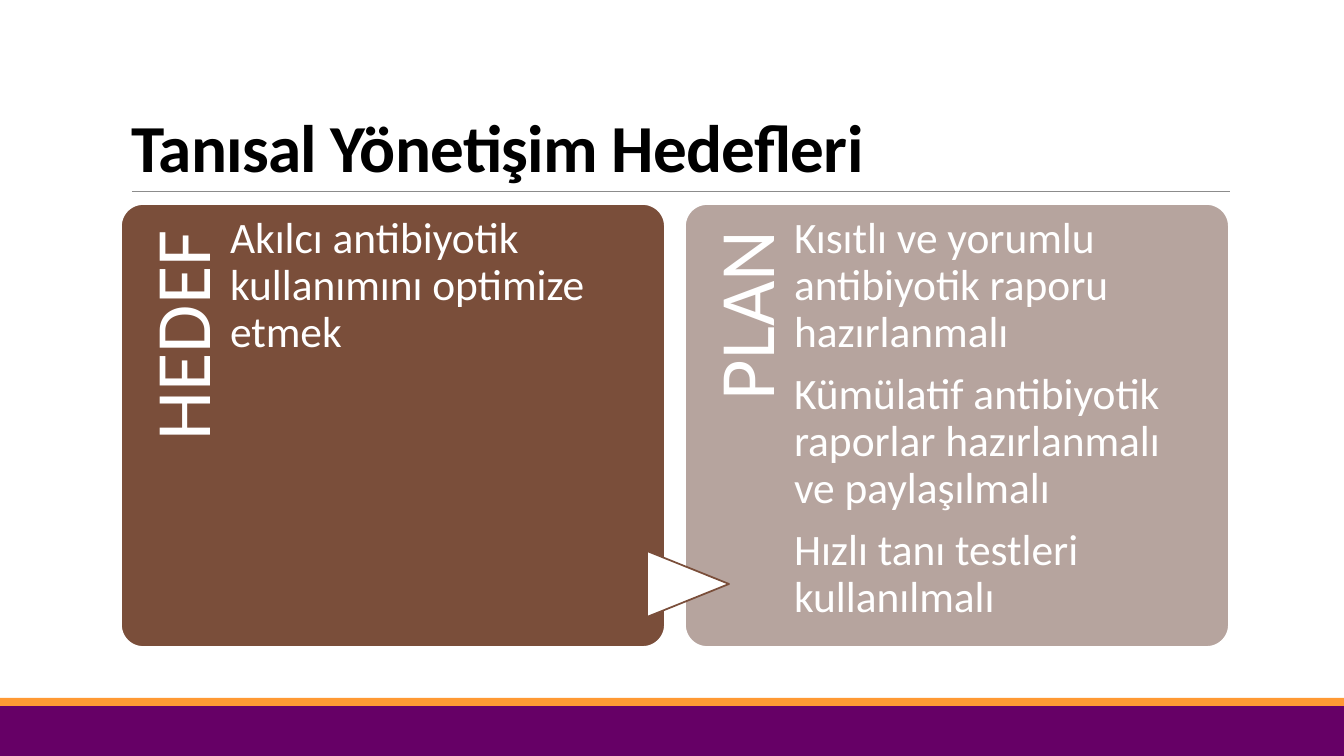
from lxml.etree import SubElement
from pptx import Presentation
from pptx.dml.color import RGBColor
from pptx.enum.shapes import MSO_CONNECTOR, MSO_SHAPE
from pptx.enum.text import MSO_ANCHOR, MSO_AUTO_SIZE, PP_ALIGN
from pptx.oxml.ns import qn
from pptx.util import Emu, Pt

EMU_PER_PX = 914400 / 100.8
CARD_LEFT, CARD_TOP, CARD_WIDTH, CARD_HEIGHT, CARD_STEP = 121, 204, 544, 443, 564
WHITE, BROWN = "FFFFFF", "7A4E3A"
CARDS = [
    ("HEDEF", BROWN, ["Akılcı antibiyotik kullanımını optimize etmek"]),
    ("PLAN", "B6A49E", [
        "Kısıtlı ve yorumlu antibiyotik raporu hazırlanmalı",
        "Kümülatif antibiyotik raporlar hazırlanmalı ve paylaşılmalı",
        "Hızlı tanı testleri kullanılmalı",
    ]),
]


def px(length):
    return Emu(round(length * EMU_PER_PX))


def color(value):
    return RGBColor.from_string(value)


def set_attributes(target, values):
    for name, value in values.items():
        setattr(target, name, value)


def add_block(page, kind, bounds, fill, outline=None):
    block = page.shapes.add_shape(kind, *map(px, bounds))
    block.shadow.inherit = False
    block.fill.solid()
    block.fill.fore_color.rgb = color(fill)
    if outline:
        block.line.color.rgb = color(outline)
        block.line.width = Pt(1.25)
    else:
        block.line.fill.background()
    return block


def add_rule(page, left, top, right):
    rule = page.shapes.add_connector(
        MSO_CONNECTOR.STRAIGHT, px(left), px(top), px(right), px(top))
    rule.line.color.rgb = color("8C8C8C")
    rule.line.width = Pt(0.5)
    SubElement(rule.element.spPr, qn("a:effectLst"))


def write(frame, texts, size, fill, paragraph_format, bold=False):
    for index, text in enumerate(texts):
        para = frame.paragraphs[0] if index == 0 else frame.add_paragraph()
        set_attributes(para, paragraph_format)
        span = para.add_run()
        span.text = text
        set_attributes(span.font, {"name": "Calibri", "size": Pt(size), "bold": bold})
        span.font.color.rgb = color(fill)


def add_text(page, bounds, texts, size, alignment, top_inset, right_inset):
    box = page.shapes.add_textbox(*map(px, bounds))
    set_attributes(box.text_frame, {
        "word_wrap": True, "margin_left": 0, "margin_bottom": 0,
        "margin_top": px(top_inset), "margin_right": px(right_inset),
    })
    write(box.text_frame, texts, size, WHITE, {
        "alignment": alignment, "line_spacing": 0.9, "space_after": Pt(11),
    })
    return box


def format_title(page, text):
    title = page.shapes.title
    set_attributes(title, {
        "left": px(121), "top": px(31), "width": px(1109), "height": px(160),
    })
    set_attributes(title.text_frame, {
        "word_wrap": True, "auto_size": MSO_AUTO_SIZE.NONE,
        "vertical_anchor": MSO_ANCHOR.BOTTOM,
    })
    write(title.text_frame, [text], 48, "000000",
          {"alignment": PP_ALIGN.LEFT, "line_spacing": 0.85}, bold=True)
    span = title.text_frame.paragraphs[0].runs[0]
    span._r.get_or_add_rPr().set("spc", "-50")


def add_card(page, left, heading, fill, items):
    card = add_block(page, MSO_SHAPE.ROUNDED_RECTANGLE,
                     (left, CARD_TOP, CARD_WIDTH, CARD_HEIGHT), fill, WHITE)
    card.adjustments[0] = 0.05
    label = add_text(page, (left - 127, 331, 364, 109), [heading], 56,
                     PP_ALIGN.RIGHT, 21, 27)
    label.rotation = 270
    add_text(page, (left + 109, CARD_TOP, 406, CARD_HEIGHT), items, 31,
             PP_ALIGN.LEFT, 12, 0)


def main():
    deck = Presentation()
    deck.slide_width, deck.slide_height = px(1344), px(756)
    page = deck.slides.add_slide(deck.slide_layouts[5])
    add_block(page, MSO_SHAPE.RECTANGLE, (0, 706, 1344, 50), "660066")
    add_block(page, MSO_SHAPE.RECTANGLE, (0, 698, 1344, 8), "FF9933")
    add_rule(page, 132, 191, 1230)
    format_title(page, "Tanısal Yönetişim Hedefleri")
    for index, (heading, fill, items) in enumerate(CARDS):
        add_card(page, CARD_LEFT + index * CARD_STEP, heading, fill, items)
    arrow = add_block(page, MSO_SHAPE.FLOWCHART_EXTRACT, (655, 543, 66, 82), WHITE, BROWN)
    arrow.rotation = 90
    deck.save("out.pptx")


if __name__ == "__main__":
    main()
